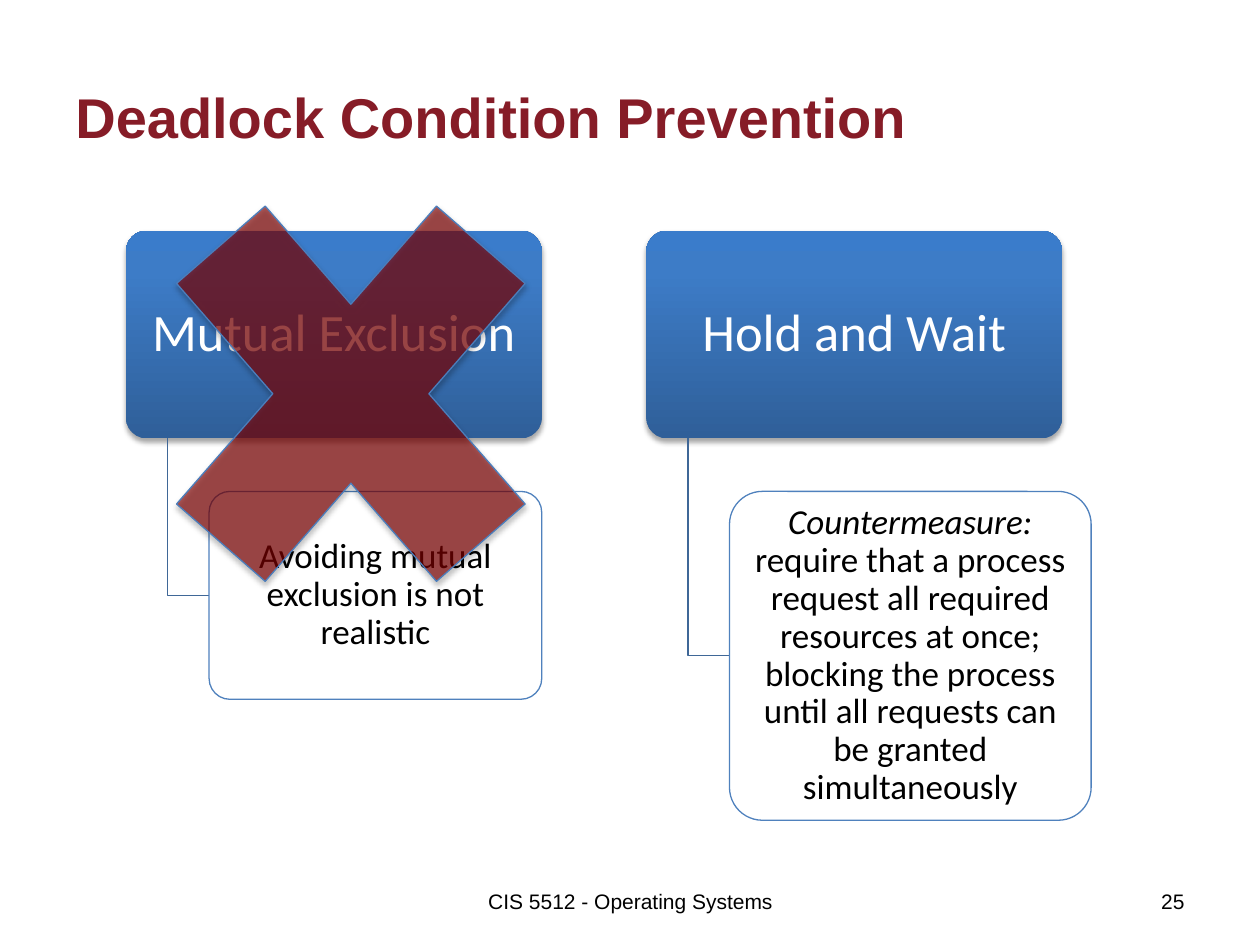
from dataclasses import dataclass

from pptx import Presentation
from pptx.dml.color import RGBColor
from pptx.enum.shapes import MSO_SHAPE
from pptx.enum.text import MSO_ANCHOR, PP_ALIGN
from pptx.oxml import parse_xml
from pptx.oxml.ns import nsdecls, qn
from pptx.util import Inches, Pt

COLORS = {
    "title": "861C27",
    "text": "000000",
    "white": "FFFFFF",
    "head bottom": "2F5F99",
    "head middle": "3D7CC7",
    "head top": "3A7CCB",
    "elbow": "3F6797",
    "note line": "4F81BD",
    "cross": "800000",
    "cross line": "4B7EBC",
}
HEAD_STOPS = [(0, "head bottom"), (80, "head middle"), (100, "head top")]
HEAD_TOP, HEAD_WIDTH, HEAD_HEIGHT = 1.83, 3.3, 1.65
NOTE_TOP = 3.9
STEP = HEAD_WIDTH / 10  # elbow offset from the head, and note offset from the elbow


@dataclass
class Span:
    text: str
    italic: bool = False


@dataclass
class Condition:
    left: float
    name: str
    note: list[Span]
    note_width: float
    note_height: float


CONDITIONS = [
    Condition(1, "Mutual Exclusion",
              [Span("Avoiding mutual exclusion is not realistic")], 2.64, 1.65),
    Condition(5.13, "Hold and Wait",
              [Span("Countermeasure: ", italic=True),
               Span("require that a process request all required resources at once; "
                    "blocking the process until all requests can be granted "
                    "simultaneously")], 2.87, 2.61),
]


def color(name: str) -> RGBColor:
    return RGBColor.from_string(COLORS[name])


def write(shape, spans: list[Span], size: float, font: str, color_name: str,
          align=PP_ALIGN.CENTER, bold: bool = False,
          margins: tuple[float, float] = (0.1, 0.05), spacing: float = 1.0) -> None:
    frame = shape.text_frame
    side, edge = (Inches(margin) for margin in margins)
    settings = {"word_wrap": True, "vertical_anchor": MSO_ANCHOR.MIDDLE,
                "margin_left": side, "margin_right": side,
                "margin_top": edge, "margin_bottom": edge}
    for key, value in settings.items():
        setattr(frame, key, value)
    para = frame.paragraphs[0]
    para.alignment = align
    para.line_spacing = spacing
    for span in spans:
        run = para.add_run()
        run.text = span.text
        run.font.color.rgb = color(color_name)
        formats = {"name": font, "size": Pt(size), "bold": bold, "italic": span.italic}
        for key, value in formats.items():
            setattr(run.font, key, value)


def add_text(page, left: float, top: float, width: float, height: float,
             text: str, size: float, color_name: str, **options) -> None:
    box = page.shapes.add_textbox(Inches(left), Inches(top), Inches(width), Inches(height))
    write(box, [Span(text)], size, "Arial", color_name, **options)


def add_plain_shape(page, kind, left: float, top: float, width: float, height: float):
    shape = page.shapes.add_shape(kind, Inches(left), Inches(top),
                                  Inches(width), Inches(height))
    shape.shadow.inherit = False
    return shape


def add_rounded(page, left: float, top: float, width: float, height: float):
    shape = add_plain_shape(page, MSO_SHAPE.ROUNDED_RECTANGLE, left, top, width, height)
    shape.adjustments[0] = 0.1
    return shape


def set_line(shape, color_name: str) -> None:
    shape.line.color.rgb = color(color_name)
    shape.line.width = Pt(0.75)


def set_fill(shape, color_name: str, opacity: int) -> None:
    shape.fill.solid()
    shape.fill.fore_color.rgb = color(color_name)
    value = shape._element.spPr.find(qn("a:solidFill"))[0]
    value.append(parse_xml(f'<a:alpha {nsdecls("a")} val="{opacity * 1000}"/>'))


def set_gradient(shape, stops: list[tuple[int, str]]) -> None:
    shape.fill.gradient()
    shape.fill.gradient_angle = 90
    stop_list = shape._element.spPr.find(qn("a:gradFill")).find(qn("a:gsLst"))
    stop_list.clear()
    for position, name in stops:
        stop_list.append(parse_xml(
            f'<a:gs {nsdecls("a")} pos="{position * 1000}">'
            f'<a:srgbClr val="{COLORS[name]}"/></a:gs>'))


def add_shadow(shape) -> None:
    effects = shape._element.spPr.find(qn("a:effectLst"))
    effects.append(parse_xml(
        f'<a:outerShdw {nsdecls("a")} blurRad="{Pt(3.1)}" dist="{Pt(1.8)}" '
        f'dir="5400000" rotWithShape="0"><a:srgbClr val="{COLORS["text"]}">'
        '<a:alpha val="35000"/></a:srgbClr></a:outerShdw>'))


def add_elbow(page, left: float, top: float, right: float, bottom: float) -> None:
    builder = page.shapes.build_freeform(Inches(left), Inches(top))
    builder.add_line_segments([(Inches(left), Inches(bottom)),
                               (Inches(right), Inches(bottom))], close=False)
    elbow = builder.convert_to_shape()
    elbow.shadow.inherit = False
    elbow.fill.background()
    set_line(elbow, "elbow")


def add_condition(page, item: Condition) -> None:
    head = add_rounded(page, item.left, HEAD_TOP, HEAD_WIDTH, HEAD_HEIGHT)
    set_gradient(head, HEAD_STOPS)
    head.line.fill.background()
    add_shadow(head)
    write(head, [Span(item.name)], 30, "Calibri", "white",
          margins=(0.06, 0.04), spacing=0.9)

    elbow_left = item.left + STEP
    note_left = elbow_left + STEP
    add_elbow(page, elbow_left, HEAD_TOP + HEAD_HEIGHT,
              note_left, NOTE_TOP + item.note_height / 2)

    note = add_rounded(page, note_left, NOTE_TOP, item.note_width, item.note_height)
    set_fill(note, "white", 90)
    set_line(note, "note line")
    write(note, item.note, 20, "Calibri", "text", margins=(0.04, 0.03), spacing=0.9)


def main() -> None:
    deck = Presentation()
    deck.slide_width, deck.slide_height = Inches(10), Inches(7.5)
    page = deck.slides.add_slide(deck.slide_layouts[6])

    # Title and footer
    add_text(page, 0.5, 0.3, 9, 1.25, "Deadlock Condition Prevention", 32, "title",
             align=PP_ALIGN.LEFT, bold=True)
    add_text(page, 3.42, 6.95, 3.17, 0.4, "CIS 5512 - Operating Systems", 12, "text")
    add_text(page, 7.17, 6.95, 2.33, 0.4, "25", 12, "text", align=PP_ALIGN.RIGHT)

    # Conditions with their notes
    for item in CONDITIONS:
        add_condition(page, item)

    # Cross over the rejected condition
    cross = add_plain_shape(page, MSO_SHAPE.MATH_MULTIPLY, 0.8, 0.85, 3.97, 4.55)
    set_fill(cross, "cross", 65)
    set_line(cross, "cross line")
    add_shadow(cross)

    deck.save("out.pptx")


if __name__ == "__main__":
    main()
